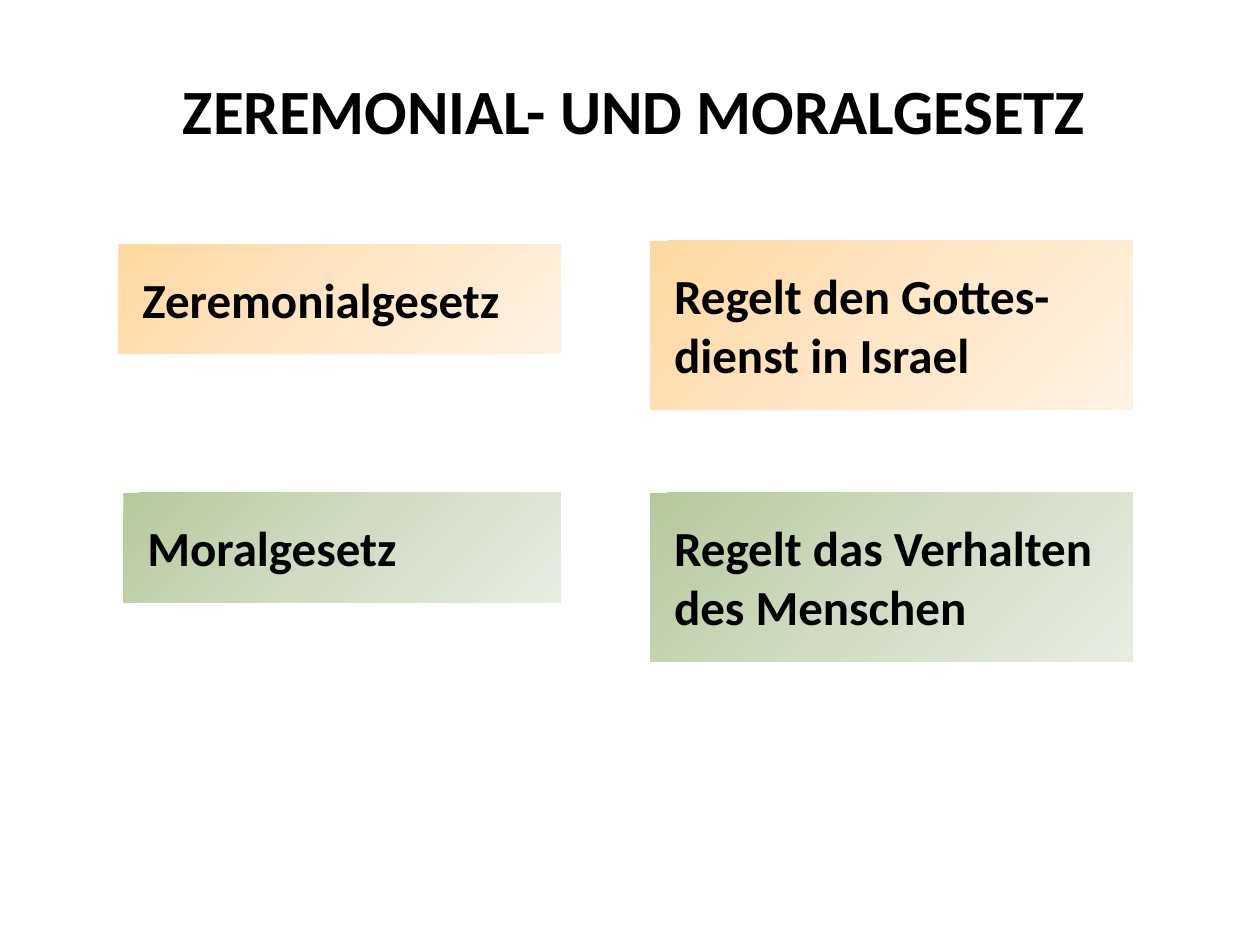
"""Build a slide that contrasts the ceremonial law with the moral law."""
from copy import deepcopy
from dataclasses import dataclass

from lxml.etree import SubElement
from pptx import Presentation
from pptx.dml.color import RGBColor
from pptx.enum.shapes import MSO_SHAPE as Shape
from pptx.enum.text import MSO_ANCHOR as Anchor, MSO_AUTO_SIZE as AutoSize, PP_ALIGN as Align
from pptx.oxml.ns import qn
from pptx.util import Inches, Pt


@dataclass(frozen=True)
class Theme:
    font: str = "Calibri"
    ink: str = "000000"
    paper: str = "FFFFFF"
    paper_alpha: int = 60
    orange: tuple = ("FFD8A0", "FFE6C5", "FFF2E3")
    green: tuple = ("B6C99C", "D1DCC3", "E8EDE2")
    title_size: int = 36
    card_size: int = 28


THEME = Theme()
WIDTH, HEIGHT = 10, 7.5
TITLE = "ZEREMONIAL- UND MORALGESETZ"
TITLE_AREA = (0.43, 0.52, 9.21, 0.63)

COLUMN_RIGHTS = (4.45, 8.99)
LINE_HEIGHT, PAD_Y, PAD_LEFT, PAD_RIGHT = 0.47, 0.2, 0.19, 0.1
LAWS = [
    (THEME.orange, [("Zeremonialgesetz", 0.94, 1.94),
                    ("Regelt den Gottes-\vdienst in Israel", 5.16, 1.91)]),
    (THEME.green, [("Moralgesetz", 0.98, 3.91),
                   ("Regelt das Verhalten\ndes Menschen", 5.16, 3.91)]),
]


def write(shape, text, size, align=Align.LEFT, insets=(0.1, 0.05, 0.1, 0.05), fit=AutoSize.NONE):
    frame = shape.text_frame
    frame.text = text
    frame.word_wrap = True
    frame.auto_size = fit
    frame.vertical_anchor = Anchor.TOP
    frame.margin_left, frame.margin_top, frame.margin_right, frame.margin_bottom = map(Inches, insets)
    for paragraph in frame.paragraphs:
        paragraph.alignment = align
        paragraph.space_before = Pt(0)
        for run in paragraph.runs:
            run.font.name, run.font.size, run.font.bold = THEME.font, Pt(size), True
            run.font.color.rgb = RGBColor.from_string(THEME.ink)


def fill_gradient(shape, colors):
    shape.fill.gradient()
    shape.fill.gradient_angle = 315
    stop_list = shape._element.spPr.find(qn("a:gradFill")).find(qn("a:gsLst"))
    stop_list.insert(1, deepcopy(stop_list[0]))
    for index, (stop, color) in enumerate(zip(shape.fill.gradient_stops, colors)):
        stop.position = index / (len(colors) - 1)
        stop.color.rgb = RGBColor.from_string(color)


def add_title(slide):
    title = slide.shapes.title
    title.left, title.top, title.width, title.height = map(Inches, TITLE_AREA)
    title.fill.solid()
    title.fill.fore_color.rgb = RGBColor.from_string(THEME.paper)
    paper = title._element.spPr.find(qn("a:solidFill"))[0]
    SubElement(paper, qn("a:alpha")).set("val", str(THEME.paper_alpha * 1000))
    write(title, TITLE, THEME.title_size, align=Align.CENTER)


def add_card(slide, text, left, top, right, colors):
    height = 2 * PAD_Y + LINE_HEIGHT * len(text.splitlines())
    card = slide.shapes.add_shape(Shape.RECTANGLE, *map(Inches, (left, top, right - left, height)))
    card.shadow.inherit = False
    card.line.fill.background()
    fill_gradient(card, colors)
    write(card, text, THEME.card_size, insets=(PAD_LEFT, PAD_Y, PAD_RIGHT, PAD_Y),
          fit=AutoSize.SHAPE_TO_FIT_TEXT)


def main():
    deck = Presentation()
    deck.slide_width, deck.slide_height = Inches(WIDTH), Inches(HEIGHT)
    slide = deck.slides.add_slide(deck.slide_layouts[5])
    add_title(slide)
    for colors, cards in LAWS:
        for (text, left, top), right in zip(cards, COLUMN_RIGHTS):
            add_card(slide, text, left, top, right, colors)
    deck.save("out.pptx")


if __name__ == "__main__":
    main()
